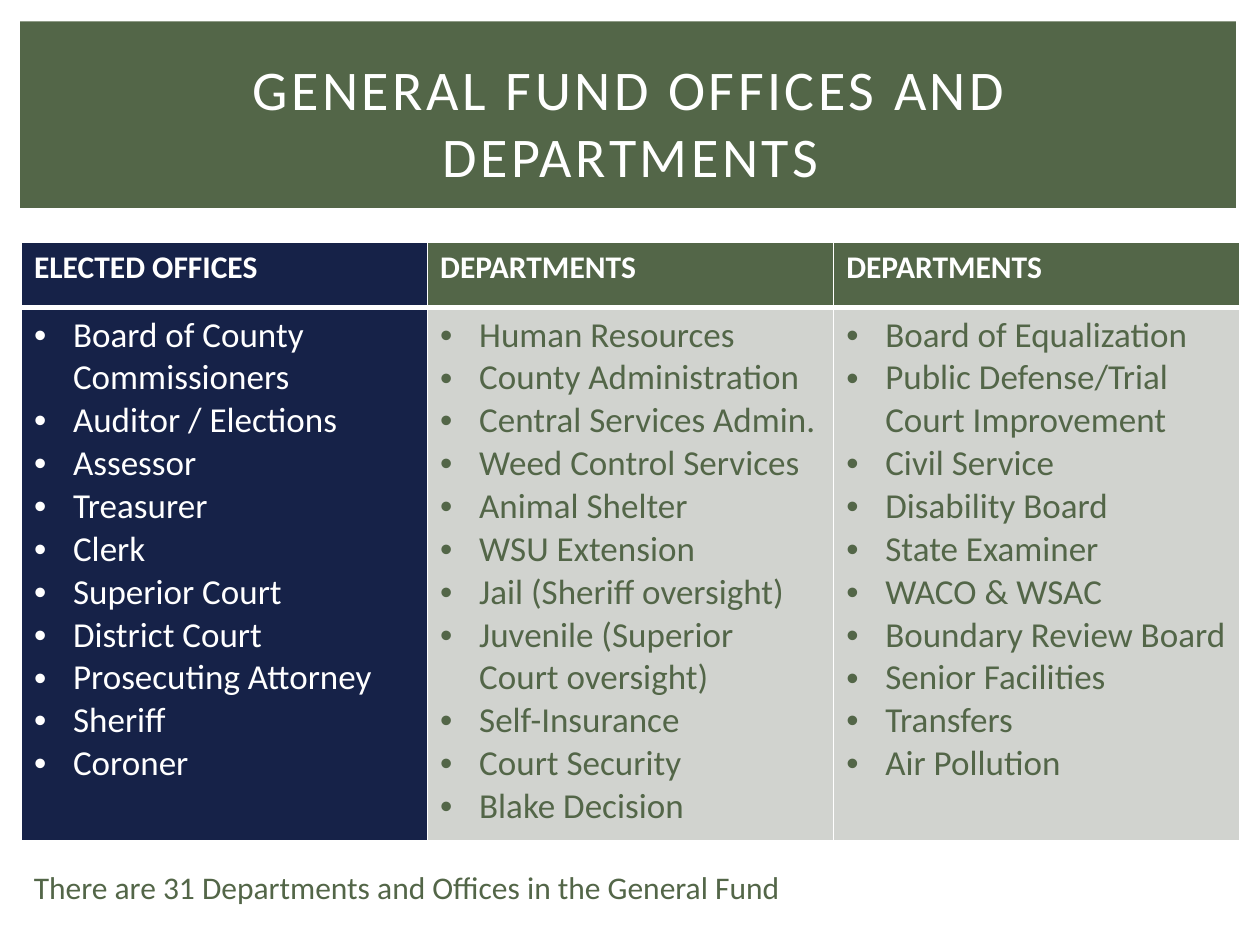
from lxml.etree import SubElement
from pptx import Presentation
from pptx.dml.color import RGBColor
from pptx.enum.shapes import MSO_SHAPE
from pptx.enum.text import MSO_ANCHOR, PP_ALIGN
from pptx.oxml.ns import qn
from pptx.util import Inches, Pt

WHITE = RGBColor(0xFF, 0xFF, 0xFF)
GREEN = RGBColor(0x53, 0x66, 0x48)
NAVY = RGBColor(0x16, 0x22, 0x48)
GRAY = RGBColor(0xD1, 0xD3, 0xCF)
FONT = "Calibri"

TITLE = "GENERAL FUND OFFICES AND DEPARTMENTS"
FOOTNOTE = "There are 31 Departments and Offices in the General Fund"

# heading, heading fill, body fill, body text colour, entries
COLUMNS = [
    ("ELECTED OFFICES", NAVY, NAVY, WHITE, [
        "Board of County Commissioners", "Auditor / Elections", "Assessor",
        "Treasurer", "Clerk", "Superior Court", "District Court",
        "Prosecuting Attorney", "Sheriff", "Coroner"]),
    ("DEPARTMENTS", GREEN, GRAY, GREEN, [
        "Human Resources", "County Administration", "Central Services Admin.",
        "Weed Control Services", "Animal Shelter", "WSU Extension",
        "Jail (Sheriff oversight)", "Juvenile (Superior Court oversight)",
        "Self-Insurance", "Court Security", "Blake Decision"]),
    ("DEPARTMENTS", GREEN, GRAY, GREEN, [
        "Board of Equalization", "Public Defense/Trial Court Improvement",
        "Civil Service", "Disability Board", "State Examiner", "WACO & WSAC",
        "Boundary Review Board", "Senior Facilities", "Transfers",
        "Air Pollution"]),
]
TABLE_WIDTH = 9.67
ROW_HEIGHTS = (0.52, 4.23)
HEADING_RULE, THIN_RULE = 3, 1


def style_text(frame, size, color, bold=False):
    for paragraph in frame.paragraphs:
        for run in paragraph.runs:
            run.font.name = FONT
            run.font.size = Pt(size)
            run.font.bold = bold
            run.font.color.rgb = color


def add_bullet(paragraph):
    properties = paragraph._p.get_or_add_pPr()
    properties.set("marL", str(Inches(0.31)))
    properties.set("indent", str(-Inches(0.31)))
    SubElement(properties, qn("a:buFont"), typeface="Arial")
    SubElement(properties, qn("a:buChar"), char="•")


def style_cell(cell, fill, top, bottom):
    """Fill the cell and draw white borders; top and bottom are in points."""
    properties = cell._tc.get_or_add_tcPr()
    borders = (("lnL", THIN_RULE), ("lnR", THIN_RULE), ("lnT", top), ("lnB", bottom))
    for side, width in borders:
        line = SubElement(properties, qn(f"a:{side}"), w=str(Pt(width)))
        SubElement(SubElement(line, qn("a:solidFill")), qn("a:srgbClr"), val=str(WHITE))
    cell.fill.solid()
    cell.fill.fore_color.rgb = fill


def add_text(slide, text, box, size, color):
    frame = slide.shapes.add_textbox(*map(Inches, box)).text_frame
    frame.word_wrap = True
    frame.text = text
    style_text(frame, size, color)
    return frame


def add_offices_table(slide):
    table = slide.shapes.add_table(
        len(ROW_HEIGHTS), len(COLUMNS), Inches(0.17), Inches(1.92),
        Inches(TABLE_WIDTH), Inches(sum(ROW_HEIGHTS))).table
    for row, height in zip(table.rows, ROW_HEIGHTS):
        row.height = Inches(height)
    for index, (heading, heading_fill, body_fill, color, entries) in enumerate(COLUMNS):
        table.columns[index].width = Inches(TABLE_WIDTH / len(COLUMNS))
        head, body = table.cell(0, index), table.cell(1, index)
        head.text_frame.text = heading
        style_text(head.text_frame, 18, WHITE, bold=True)
        style_cell(head, heading_fill, THIN_RULE, HEADING_RULE)
        body.text_frame.text = "\n".join(entries)
        style_text(body.text_frame, 20, color)
        for paragraph in body.text_frame.paragraphs:
            add_bullet(paragraph)
        style_cell(body, body_fill, HEADING_RULE, THIN_RULE)


def main():
    deck = Presentation()
    deck.slide_width, deck.slide_height = Inches(10), Inches(7.5)
    slide = deck.slides.add_slide(deck.slide_layouts[6])

    banner = slide.shapes.add_shape(
        MSO_SHAPE.RECTANGLE, *map(Inches, (0.16, 0.17, 9.65, 1.48)))
    banner.shadow.inherit = False
    banner.fill.solid()
    banner.fill.fore_color.rgb = GREEN
    banner.line.fill.background()

    add_offices_table(slide)

    title = add_text(slide, TITLE, (0.42, 0.39, 9.17, 1.15), 32, WHITE)
    title.vertical_anchor = MSO_ANCHOR.MIDDLE
    title.paragraphs[0].alignment = PP_ALIGN.CENTER
    title.paragraphs[0].runs[0].font._element.set("spc", "200")

    add_text(slide, FOOTNOTE, (0.17, 6.84, 8, 0.4), 18, GREEN)
    deck.save("out.pptx")


if __name__ == "__main__":
    main()
